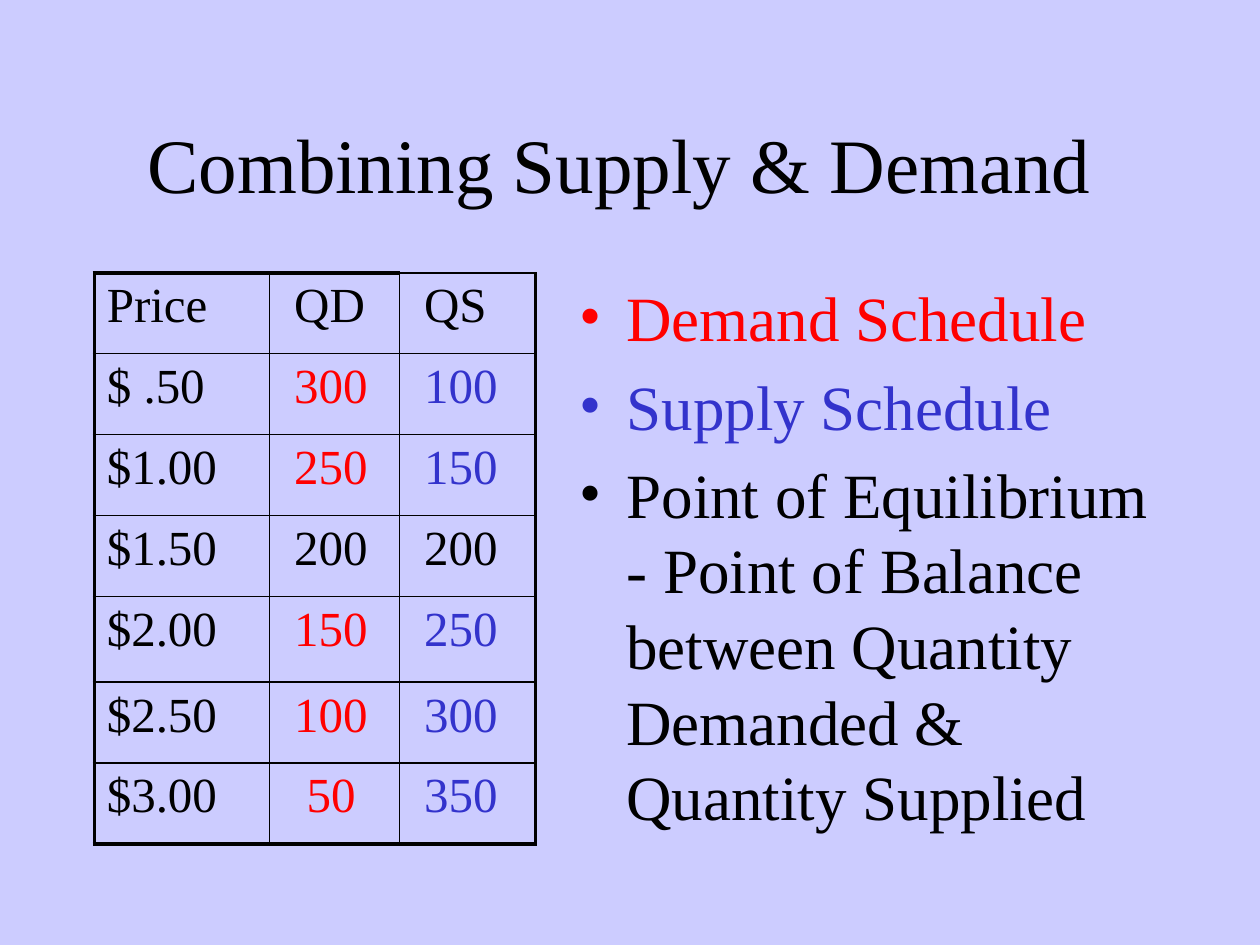
from dataclasses import dataclass

from lxml.etree import SubElement
from pptx import Presentation
from pptx.dml.color import RGBColor
from pptx.enum.text import MSO_ANCHOR, PP_ALIGN
from pptx.oxml.ns import qn
from pptx.util import Cm, Pt


@dataclass(frozen=True)
class Theme:
    font: str = "Times New Roman"
    back: str = "CCCCFF"
    ink: str = "000000"
    red: str = "FF0000"
    blue: str = "3333CC"
    head: int = 44
    body: int = 36
    cell: int = 28
    thin: float = 1
    thick: float = 2.25


THEME = Theme()
ROWS = [
    ("Price", "QD", "QS"),
    ("$ .50", "300", "100"),
    ("$1.00", "250", "150"),
    ("$1.50", "200", "200"),
    ("$2.00", "150", "250"),
    ("$2.50", "100", "300"),
    ("$3.00", "50", "350"),
]
POINTS = [
    ("Demand Schedule", THEME.red),
    ("Supply Schedule", THEME.blue),
    ("Point of Equilibrium - Point of Balance between Quantity "
     "Demanded & Quantity Supplied", THEME.ink),
]


def write(para, text, size, color=THEME.ink, align=PP_ALIGN.LEFT, bullet=None):
    run = para.add_run()
    run.text = text
    run.font.name = THEME.font
    run.font.size = Pt(size)
    run.font.color.rgb = RGBColor.from_string(color)
    para.alignment = align
    if bullet:
        para.space_before = Pt(size * 0.2)
        props = para._p.get_or_add_pPr()
        props.set("marL", str(Cm(0.95)))
        props.set("indent", str(-Cm(0.95)))
        SubElement(props, qn("a:buFont"), typeface=THEME.font)
        SubElement(props, qn("a:buChar"), char=bullet)


def place(shape, box):
    shape.left, shape.top, shape.width, shape.height = map(Cm, box)


def add_title(slide, box):
    title = slide.shapes.title
    place(title, box)
    frame = title.text_frame
    frame.vertical_anchor = MSO_ANCHOR.MIDDLE
    write(frame.paragraphs[0], "Combining Supply & Demand", THEME.head,
          align=PP_ALIGN.CENTER)


def add_points(slide, box):
    frame = slide.shapes.add_textbox(*map(Cm, box)).text_frame
    frame.word_wrap = True
    for i, (text, color) in enumerate(POINTS):
        para = frame.add_paragraph() if i else frame.paragraphs[0]
        write(para, text, THEME.body, color=color, bullet="•")


def edge(cell, thick):
    props = cell._tc.get_or_add_tcPr()
    for side in "LRTB":
        width = THEME.thick if side in thick else THEME.thin
        line = SubElement(props, qn(f"a:ln{side}"), w=str(Pt(width)))
        fill = SubElement(line, qn("a:solidFill"))
        SubElement(fill, qn("a:srgbClr"), val=THEME.ink)


def add_table(slide, box):
    last, end = len(ROWS) - 1, len(ROWS[0]) - 1
    frame = slide.shapes.add_table(last + 1, end + 1, *map(Cm, box))
    table = frame.table
    table.first_row = table.horz_banding = False
    for col, width in zip(table.columns, (3.53, 2.62, 2.74)):
        col.width = Cm(width)
    for r, row in enumerate(ROWS):
        table.rows[r].height = Cm(1.73 if r == 4 else 1.63)
        level = row[1] == row[2]
        for c, text in enumerate(row):
            cell = table.cell(r, c)
            sides = {"L": c == 0, "R": c == end,
                     "T": r == 0 and c < end, "B": r == last}
            edge(cell, [side for side, on in sides.items() if on])
            cell.fill.background()
            if c:
                cell.margin_left = Cm(0.5 + 0.25 * (text == "50"))
            plain = r == 0 or level
            color = THEME.ink if plain else (THEME.ink, THEME.red, THEME.blue)[c]
            write(cell.text_frame.paragraphs[0], text, THEME.cell, color=color)


def main():
    deck = Presentation()
    deck.slide_width, deck.slide_height = Cm(25.4), Cm(19.05)
    slide = deck.slides.add_slide(deck.slide_layouts[5])
    fill = slide.background.fill
    fill.solid()
    fill.fore_color.rgb = RGBColor.from_string(THEME.back)
    add_title(slide, (0.85, 1.69, 23.28, 3.18))
    add_points(slide, (11.43, 5.5, 12.28, 11.43))
    add_table(slide, (1.9, 5.5, 8.89, 11.51))
    deck.save("out.pptx")


if __name__ == "__main__":
    main()
